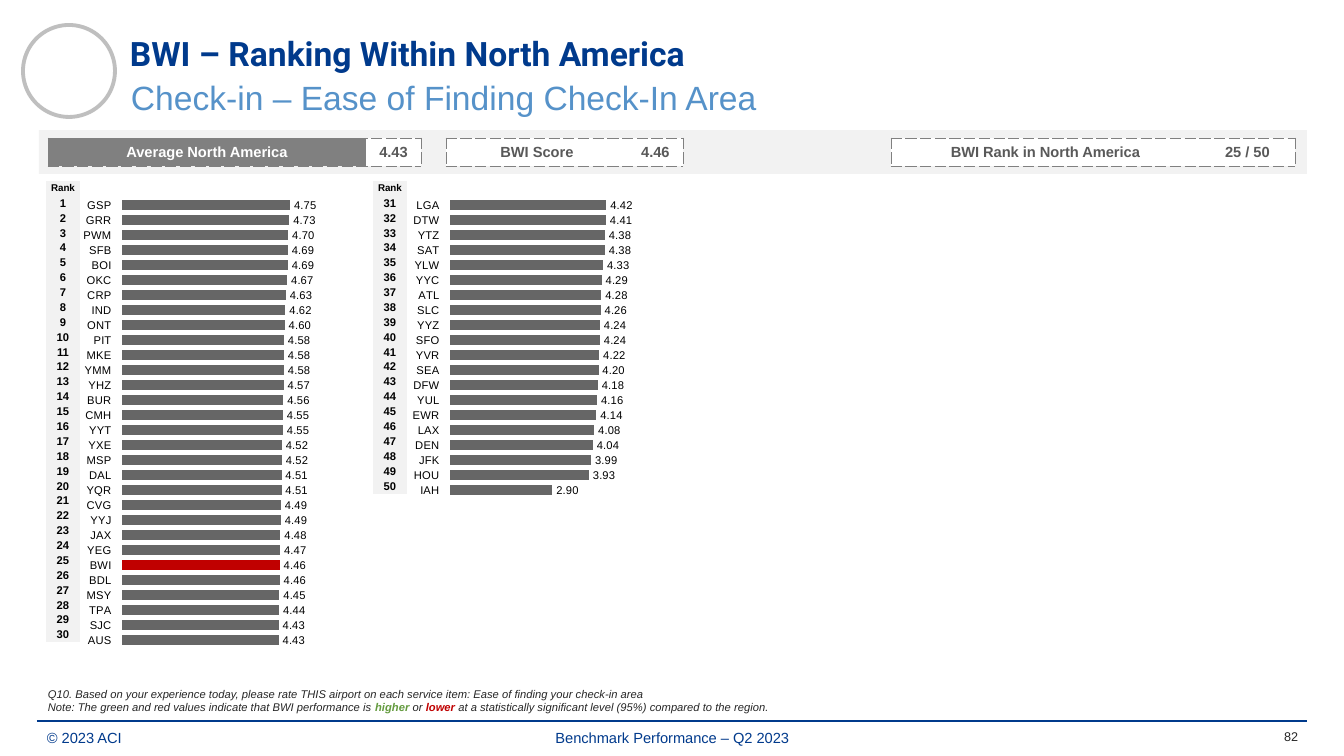
from lxml import etree
from pptx import Presentation
from pptx.chart.data import CategoryChartData
from pptx.dml.color import RGBColor
from pptx.enum.chart import XL_CHART_TYPE, XL_LABEL_POSITION, XL_TICK_LABEL_POSITION, XL_TICK_MARK
from pptx.enum.shapes import MSO_CONNECTOR, MSO_SHAPE
from pptx.enum.text import MSO_ANCHOR, PP_ALIGN
from pptx.oxml.ns import qn
from pptx.util import Emu, Pt

LEFT, CENTER, RIGHT = PP_ALIGN.LEFT, PP_ALIGN.CENTER, PP_ALIGN.RIGHT
TOP, MIDDLE, BOTTOM = MSO_ANCHOR.TOP, MSO_ANCHOR.MIDDLE, MSO_ANCHOR.BOTTOM
RECTANGLE, OVAL, STRAIGHT = MSO_SHAPE.RECTANGLE, MSO_SHAPE.OVAL, MSO_CONNECTOR.STRAIGHT
BAR_CLUSTERED, OUTSIDE_END = XL_CHART_TYPE.BAR_CLUSTERED, XL_LABEL_POSITION.OUTSIDE_END
NO_TICK, LOW = XL_TICK_MARK.NONE, XL_TICK_LABEL_POSITION.LOW

EMU_PER_PX = 914400 / 100.8
NO_TABLE_STYLE = "{2D5ABB26-0587-4C30-8999-92F81FD0307C}"
PLOT_AREA = {"x": 0.17, "y": 0.03, "w": 0.71, "h": 0.94}
COLORS = {
    "navy": "003A8C", "sky": "5692C9", "white": "FFFFFF", "black": "000000",
    "ink": "262626", "score": "595959", "bar": "666666", "header": "808080",
    "ring": "BFBFBF", "band": "F2F2F2", "higher": "649B3F", "lower": "C00000",
}

HOME = "BWI"
ROWS_PER_COLUMN = 30
AIRPORTS = (
    "GSP GRR PWM SFB BOI OKC CRP IND ONT PIT MKE YMM YHZ BUR CMH YYT YXE MSP DAL YQR "
    "CVG YYJ JAX YEG BWI BDL MSY TPA SJC AUS LGA DTW YTZ SAT YLW YYC ATL SLC YYZ SFO "
    "YVR SEA DFW YUL EWR LAX DEN JFK HOU IAH"
).split()
SCORES = [
    4.75, 4.73, 4.70, 4.69, 4.69, 4.67, 4.63, 4.62, 4.60, 4.58,
    4.58, 4.58, 4.57, 4.56, 4.55, 4.55, 4.52, 4.52, 4.51, 4.51,
    4.49, 4.49, 4.48, 4.47, 4.46, 4.46, 4.45, 4.44, 4.43, 4.43,
    4.42, 4.41, 4.38, 4.38, 4.33, 4.29, 4.28, 4.26, 4.24, 4.24,
    4.22, 4.20, 4.18, 4.16, 4.14, 4.08, 4.04, 3.99, 3.93, 2.90,
]


def px(length):
    return Emu(round(length * EMU_PER_PX))


def color(name):
    return RGBColor.from_string(COLORS[name])


def style_font(font, size, color_name, bold=False, italic=False, name="Arial"):
    font.name, font.size, font.bold, font.italic = name, Pt(size), bold, italic
    font.color.rgb = color(color_name)


class SlideBuilder:
    def __init__(self, slide):
        self.shapes = slide.shapes

    def text(self, box, paragraphs, size, align=LEFT, anchor=MIDDLE, **style):
        """Each paragraph is a list of (text, colour, bold) runs."""
        frame = self.shapes.add_textbox(*map(px, box)).text_frame
        frame.word_wrap = True
        frame.vertical_anchor = anchor
        for index, runs in enumerate(paragraphs):
            paragraph = frame.add_paragraph() if index else frame.paragraphs[0]
            paragraph.alignment = align
            for text, color_name, bold in runs:
                run = paragraph.add_run()
                run.text = text
                style_font(run.font, size, color_name, bold, **style)

    def shape(self, kind, box, fill, line=None, width=0):
        shape = self.shapes.add_shape(kind, *map(px, box))
        shape.shadow.inherit = False
        shape.fill.solid()
        shape.fill.fore_color.rgb = color(fill)
        if line:
            shape.line.color.rgb = color(line)
            shape.line.width = Pt(width)
        else:
            shape.line.fill.background()

    def line(self, x1, y1, x2, y2, color_name, width):
        connector = self.shapes.add_connector(STRAIGHT, px(x1), px(y1), px(x2), px(y2))
        connector.line.color.rgb = color(color_name)
        connector.line.width = Pt(width)
        etree.SubElement(connector._element.spPr, qn("a:effectLst"))

    def table(self, left, top, widths, height, row_count):
        frame = self.shapes.add_table(
            row_count, len(widths), px(left), px(top), px(sum(widths)), px(height))
        table = frame.table
        table.first_row = table.horz_banding = False
        table._tbl.tblPr.find(qn("a:tableStyleId")).text = NO_TABLE_STYLE
        for column, width in zip(table.columns, widths):
            column.width = px(width)
        for row in table.rows:
            row.height = px(height / row_count)
        return table

    def cell(self, cell, text="", size=8, color_name="black", fill=None, dashed_sides=""):
        cell.margin_left = cell.margin_right = cell.margin_top = cell.margin_bottom = 0
        cell.vertical_anchor = MIDDLE
        properties = cell._tc.get_or_add_tcPr()
        for side in dashed_sides:
            border = etree.SubElement(properties, qn(f"a:ln{side}"), w=str(Pt(0.5)))
            paint = etree.SubElement(border, qn("a:solidFill"))
            etree.SubElement(paint, qn("a:srgbClr"), val=COLORS["header"])
            etree.SubElement(border, qn("a:prstDash"), val="dash")
        if fill:
            cell.fill.solid()
            cell.fill.fore_color.rgb = color(fill)
        else:
            cell.fill.background()
        paragraph = cell.text_frame.paragraphs[0]
        paragraph.alignment = CENTER
        if text:
            run = paragraph.add_run()
            run.text = text
            style_font(run.font, size, color_name, bold=True)
        else:
            etree.SubElement(paragraph._p, qn("a:endParaRPr"), sz=str(size * 100))

    def score_box(self, left, widths, label, score, label_color="score", label_fill="white"):
        table = self.table(left, 138, widths, 28, 1)
        self.cell(table.cell(0, 0), label, 10.5, label_color, label_fill, "LTB")
        self.cell(table.cell(0, 1), score, 10.5, "score", "white", "RTB")

    def ranking_chart(self, box, airports, scores):
        """Bars always fill the same number of rows, so short lists are padded."""
        padding = ROWS_PER_COLUMN - len(airports)
        data = CategoryChartData(number_format="0.00")
        data.categories = airports + [""] * padding
        data.add_series("Score", scores + [None] * padding)
        chart = self.shapes.add_chart(BAR_CLUSTERED, *map(px, box), data).chart
        chart.has_title = chart.has_legend = False
        style_font(chart.font, 8, "black")

        plot = chart.plots[0]
        plot.gap_width = 50
        plot.vary_by_categories = False
        plot.has_data_labels = True
        labels = plot.data_labels
        labels.show_value = True
        labels.position = OUTSIDE_END
        labels.number_format, labels.number_format_is_linked = "#,##0.00", False
        style_font(labels.font, 8, "black")

        series = plot.series[0]
        series.format.fill.solid()
        series.format.fill.fore_color.rgb = color("bar")
        if HOME in airports:
            home_fill = series.points[airports.index(HOME)].format.fill
            home_fill.solid()
            home_fill.fore_color.rgb = color("lower")

        category_axis, value_axis = chart.category_axis, chart.value_axis
        category_axis.reverse_order = True
        category_axis.major_tick_mark = category_axis.minor_tick_mark = NO_TICK
        category_axis.tick_label_position = LOW
        category_axis.format.line.fill.background()
        style_font(category_axis.tick_labels.font, 8, "black")
        value_axis.minimum_scale, value_axis.maximum_scale = 0, 5
        value_axis.has_major_gridlines = value_axis.visible = False

        plot_area = chart._chartSpace.chart.plotArea
        for layout in plot_area.findall(qn("c:layout")):
            plot_area.remove(layout)
        layout = etree.Element(qn("c:layout"))
        plot_area.insert(0, layout)
        manual = etree.SubElement(layout, qn("c:manualLayout"))
        settings = {"layoutTarget": "inner", "xMode": "edge", "yMode": "edge", **PLOT_AREA}
        for name, value in settings.items():
            etree.SubElement(manual, qn(f"c:{name}"), val=str(value))


def main():
    presentation = Presentation()
    presentation.slide_width, presentation.slide_height = px(1344), px(756)
    builder = SlideBuilder(presentation.slides.add_slide(presentation.slide_layouts[6]))

    builder.text((434, 722, 477, 31), [[("Benchmark Performance – Q2 2023", "navy", False)]], 10.5, CENTER)
    builder.text((37, 722, 424, 31), [[("© 2023 ACI", "navy", False)]], 10.5)
    builder.line(37, 721, 1307, 721, "navy", 1)
    builder.text((120, 18, 971, 71), [[("BWI – Ranking Within North America", "navy", True)]], 24, name="Roboto")
    builder.text((121, 72, 1010, 50), [[("Check-in – Ease of Finding Check-In Area", "sky", False)]], 24, anchor=TOP)
    builder.shape(OVAL, (23, 25, 92, 92), "white", "ring", 2.75)
    builder.text((38, 678, 1270, 41), [
        [("Q10. Based on your experience today, please rate THIS airport on each service item: "
          "Ease of finding your check-in area", "ink", False)],
        [("Note: The green and red values indicate that BWI performance is ", "ink", False),
         ("higher", "higher", True), (" or ", "ink", False), ("lower", "lower", True),
         (" at a statistically significant level (95%) compared to the region.", "ink", False)],
    ], 8, anchor=BOTTOM, italic=True)

    widths = [34, 293, 34, 293, 293, 232]
    ranks = builder.table(46, 181, widths, 462, ROWS_PER_COLUMN + 1)
    for row in range(ROWS_PER_COLUMN + 1):
        for column in range(len(widths)):
            rank = row + ROWS_PER_COLUMN * (column // 2)
            if column in (0, 2) and rank <= len(AIRPORTS):
                text, size = (str(rank), 8) if row else ("Rank", 7)
                builder.cell(ranks.cell(row, column), text, size, fill="band")
            else:
                builder.cell(ranks.cell(row, column))

    builder.shape(RECTANGLE, (39, 130, 1268, 44), "band")
    builder.score_box(891, [309, 95], "BWI Rank in North America", "25 / 50")
    builder.score_box(446, [182, 55], "BWI Score", "4.46")
    builder.score_box(48, [318, 55], "Average North America", "4.43", "white", "header")

    for index, left in enumerate((79, 407)):
        rows = slice(index * ROWS_PER_COLUMN, (index + 1) * ROWS_PER_COLUMN)
        builder.ranking_chart((left, 183, 250, 479), AIRPORTS[rows], SCORES[rows])

    builder.text((1229, 721, 79, 31), [[("82", "ink", False)]], 9, RIGHT)
    presentation.save("out.pptx")


if __name__ == "__main__":
    main()
